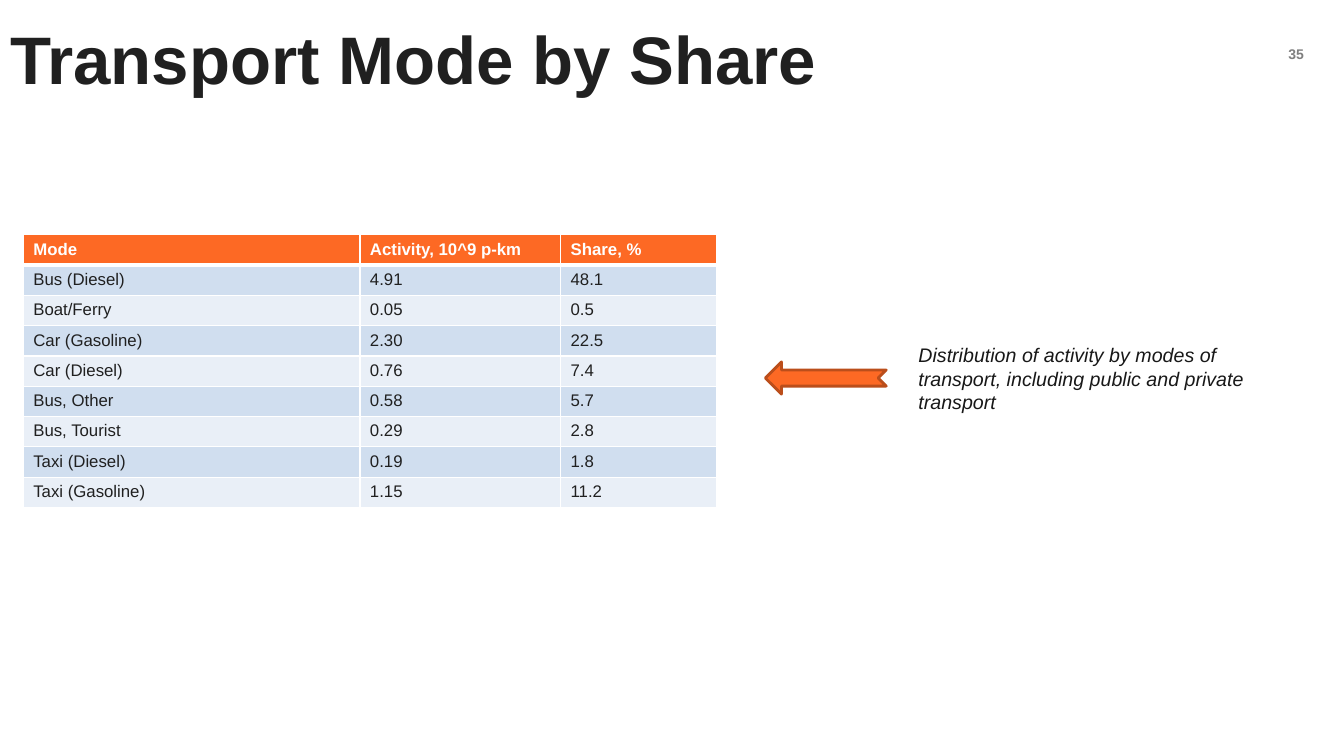
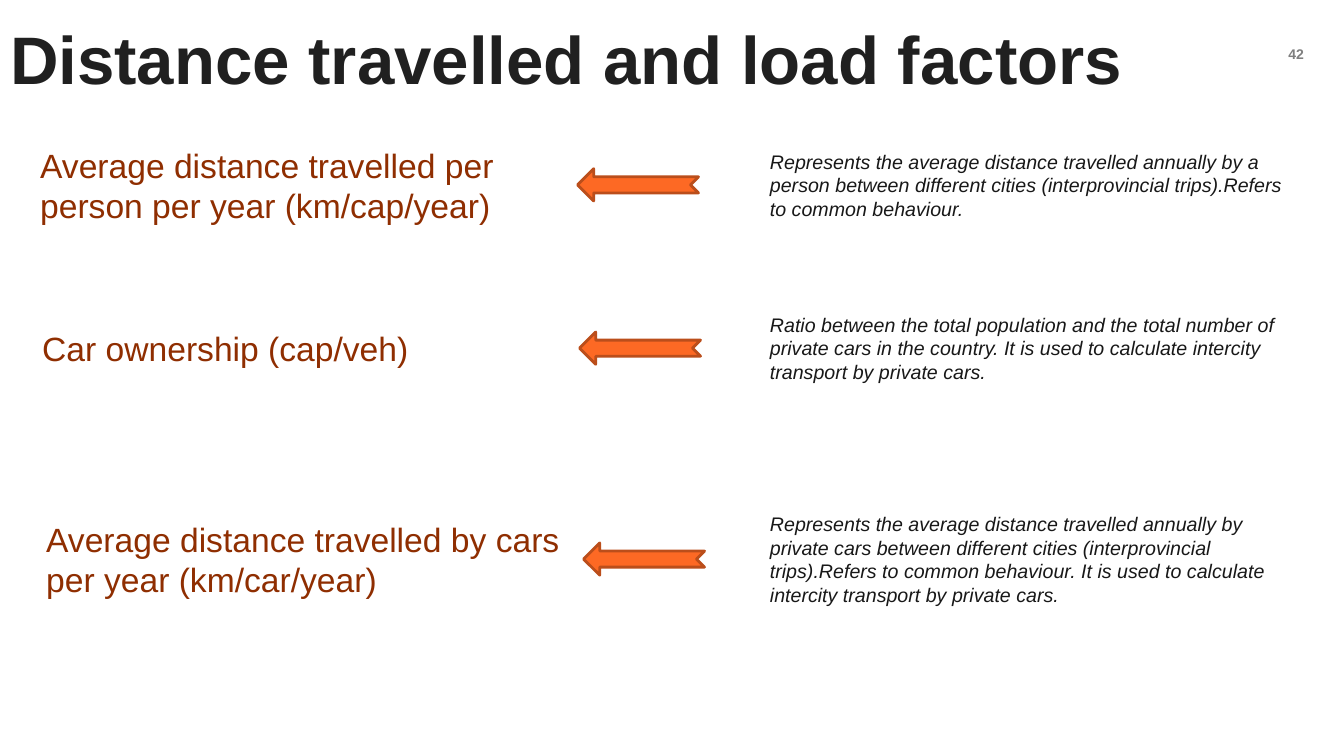
from dataclasses import dataclass

from pptx import Presentation
from pptx.dml.color import RGBColor
from pptx.enum.shapes import MSO_SHAPE
from pptx.enum.text import MSO_ANCHOR, MSO_AUTO_SIZE, PP_ALIGN
from pptx.oxml import parse_xml
from pptx.oxml.ns import nsdecls
from pptx.util import Inches, Pt


@dataclass(frozen=True)
class Theme:
    font: str = "Arial"
    dark: str = "202020"
    note: str = "181818"
    label: str = "8F2E01"
    number: str = "7F7F7F"
    accent: str = "FD6924"
    accent_edge: str = "BB4E1B"
    white: str = "FFFFFF"
    bands: tuple = ("D0DEEF", "E9EFF7")
    title_size: int = 48
    label_size: int = 24
    note_size: int = 14
    cell_size: int = 12
    number_size: int = 10


THEME = Theme()
SLIDE_W, SLIDE_H = Inches(13.33), Inches(7.5)
ARROW_W, ARROW_H = 9, 4.27
LABEL_W = 40.72

MODES = [
    ("Mode", "Activity, 10^9 p-km", "Share, %"),
    ("Bus (Diesel)", "4.91", "48.1"),
    ("Boat/Ferry", "0.05", "0.5"),
    ("Car (Gasoline)", "2.30", "22.5"),
    ("Car (Diesel)", "0.76", "7.4"),
    ("Bus, Other", "0.58", "5.7"),
    ("Bus, Tourist", "0.29", "2.8"),
    ("Taxi (Diesel)", "0.19", "1.8"),
    ("Taxi (Gasoline)", "1.15", "11.2"),
]

FACTORS = [
    (2.25, 24.45, "Average distance travelled per person per year (km/cap/year)", 2,
     "Represents the average distance travelled annually by a person between different "
     "cities (interprovincial trips).Refers to common behaviour.", 3),
    (2.4, 46.05, "Car ownership (cap/veh)", 1,
     "Ratio between the total population and the total number of private cars in the "
     "country. It is used to calculate intercity transport by private cars.", 3),
    (2.7, 73.95, "Average distance travelled by cars per year (km/car/year)", 2,
     "Represents the average distance travelled annually by private cars between different "
     "cities (interprovincial trips).Refers to common behaviour. It is used to calculate "
     "intercity transport by private cars.", 4),
]


def across(share):
    return int(SLIDE_W * share / 100)


def down(share):
    return int(SLIDE_H * share / 100)


def write(tf, text, size, color, bold=False, italic=False):
    p = tf.paragraphs[0]
    r = p.add_run()
    r.text = text
    r.font.name = THEME.font
    r.font.size = Pt(size)
    r.font.bold = bold
    r.font.italic = italic
    r.font.color.rgb = RGBColor.from_string(color)
    return p


def add_title_slide(prs, title, number):
    s = prs.slides.add_slide(prs.slide_layouts[5])
    sp = s.shapes.title
    sp.left, sp.top, sp.width, sp.height = 0, 0, across(89.5), down(16.53)
    tf = sp.text_frame
    tf.word_wrap = True
    tf.auto_size = MSO_AUTO_SIZE.NONE
    tf.vertical_anchor = MSO_ANCHOR.MIDDLE
    p = write(tf, title, THEME.title_size, THEME.dark, bold=True)
    p.alignment = PP_ALIGN.LEFT
    p.line_spacing = 0.9
    sp = s.shapes.add_textbox(across(94.67), down(5.33), across(3.53), down(5.33))
    sp.text_frame.word_wrap = True
    p = write(sp.text_frame, number, THEME.number_size, THEME.number, bold=True)
    p.alignment = PP_ALIGN.CENTER
    return s


def add_text(s, x, middle, w, text, lines, size, color, italic=False):
    h = Inches(0.1) + int(lines * Pt(size) * 1.2)
    sp = s.shapes.add_textbox(across(x), down(middle) - h // 2, across(w), h)
    tf = sp.text_frame
    tf.word_wrap = True
    tf.auto_size = MSO_AUTO_SIZE.SHAPE_TO_FIT_TEXT
    write(tf, text, size, color, italic=italic)


def add_note(s, x, middle, w, text, lines):
    add_text(s, x, middle, w, text, lines, THEME.note_size, THEME.note, italic=True)


def add_arrow(s, x, middle):
    sp = s.shapes.add_shape(MSO_SHAPE.NOTCHED_RIGHT_ARROW, across(x),
                            down(middle - ARROW_H / 2), across(ARROW_W), down(ARROW_H))
    sp.rotation = 180
    sp.shadow.inherit = False
    sp.fill.solid()
    sp.fill.fore_color.rgb = RGBColor.from_string(THEME.accent)
    sp.line.color.rgb = RGBColor.from_string(THEME.accent_edge)
    sp.line.width = Pt(2)


def set_borders(cell, top, bottom):
    pr = cell._tc.get_or_add_tcPr()
    for i, (side, width) in enumerate((("L", 1), ("R", 1), ("T", top), ("B", bottom))):
        pr.insert(i, parse_xml(
            f'<a:ln{side} {nsdecls("a")} w="{Pt(width)}"><a:solidFill>'
            f'<a:srgbClr val="{THEME.white}"/></a:solidFill></a:ln{side}>'))


def add_mode_table(s, x, y, widths, row_h, rows):
    frame = s.shapes.add_table(len(rows), len(widths), across(x), down(y),
                               across(sum(widths)), down(row_h * len(rows)))
    table = frame.table
    for col, w in zip(table.columns, widths):
        col.width = across(w)
    for i, row in enumerate(rows):
        table.rows[i].height = down(row_h)
        header = i == 0
        fill = THEME.accent if header else THEME.bands[(i - 1) % 2]
        color = THEME.white if header else THEME.dark
        for j, text in enumerate(row):
            cell = table.cell(i, j)
            cell.fill.solid()
            cell.fill.fore_color.rgb = RGBColor.from_string(fill)
            set_borders(cell, 3 if i == 1 else 1, 3 if header else 1)
            write(cell.text_frame, text, THEME.cell_size, color, bold=header)


def add_share_slide(prs):
    s = add_title_slide(prs, "Transport Mode by Share", "35")
    add_note(s, 67.6, 50.05, 29.7,
             "Distribution of activity by modes of transport, including public and "
             "private transport", 3)
    add_arrow(s, 56.94, 50)
    add_mode_table(s, 1.73, 31.07, (25.05, 14.93, 11.63), 4, MODES)


def add_factor_slide(prs):
    s = add_title_slide(prs, "Distance travelled and load factors", "42")
    for x, middle, label, label_lines, note, note_lines in FACTORS:
        add_text(s, x, middle, LABEL_W, label, label_lines, THEME.label_size, THEME.label)
        add_note(s, 56.55, middle, 39.82, note, note_lines)
        add_arrow(s, x + LABEL_W, middle)


def main():
    prs = Presentation()
    prs.slide_width, prs.slide_height = SLIDE_W, SLIDE_H
    add_share_slide(prs)
    add_factor_slide(prs)
    prs.save("out.pptx")


if __name__ == "__main__":
    main()
